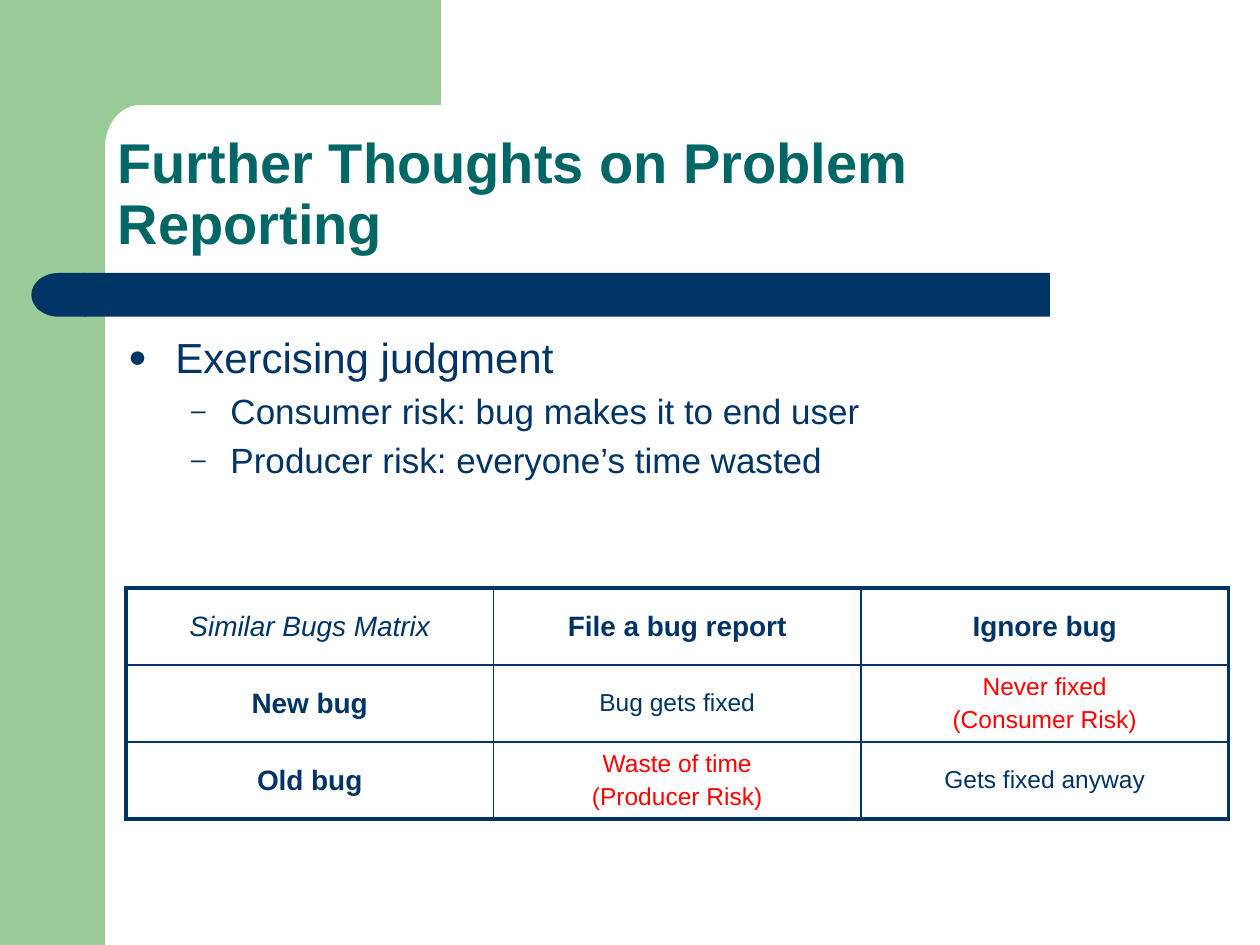
import math
import pptx
import pptx.util
import pptx.dml.color
import pptx.enum.shapes
import pptx.enum.text
import pptx.oxml
import pptx.oxml.ns

Pt = pptx.util.Pt
Shape = pptx.enum.shapes.MSO_SHAPE
Align = pptx.enum.text.PP_ALIGN
Anchor = pptx.enum.text.MSO_ANCHOR
HUES = {"green": "99CC99", "navy": "003366", "teal": "006666", "red": "FF0000"}
FONT = "Arial"
ITEMS = [
    ("Exercising judgment", 0, 24),
    ("Consumer risk: bug makes it to end user", 1, 20),
    ("Producer risk: everyone’s time wasted", 1, 20),
]
BULLETS = [("●", 27, -27), ("–", 58.5, -22.5)]
HEAD = {"size": 16, "bold": True}
RISK = {"size": 14, "hue": "red"}
PLAIN = {"size": 14}
CELLS = [
    [(["Similar Bugs Matrix"], {"size": 16, "italic": True}),
     (["File a bug report"], HEAD), (["Ignore bug"], HEAD)],
    [(["New bug"], HEAD), (["Bug gets fixed"], PLAIN),
     (["Never fixed", "(Consumer Risk)"], RISK)],
    [(["Old bug"], HEAD), (["Waste of time", "(Producer Risk)"], RISK),
     (["Gets fixed anyway"], PLAIN)],
]


def color(name):
    return pptx.dml.color.RGBColor.from_string(HUES[name])


def write(para, text, size=16, hue="navy", bold=False, italic=False,
          align=Align.LEFT, before=0.2):
    para.alignment = align
    para.space_before = Pt(round(size * before, 1))
    run = para.add_run()
    run.text = text
    font = run.font
    font.name, font.size = FONT, Pt(size)
    font.bold, font.italic = bold, italic
    font.color.rgb = color(hue)


def paint(shape, hue):
    shape.shadow.inherit = False
    shape.fill.solid()
    shape.fill.fore_color.rgb = color(hue)
    shape.line.fill.background()
    return shape


def block(slide, kind, box, hue):
    return paint(slide.shapes.add_shape(kind, *map(Pt, box)), hue)


def corner(slide):
    left, top, wide, high = 60, 60, 20, 24
    arc = []
    for step in range(13):
        turn = math.radians(90 * step / 12)
        arc.append((left + wide * (1 - math.sin(turn)),
                    top + high * (1 - math.cos(turn))))
    points = [(252, top), *arc, (left, 92), (36, 92), (36, 0)]
    path = slide.shapes.build_freeform(Pt(252), 0, scale=1.0)
    path.add_line_segments([(Pt(x), Pt(y)) for x, y in points], close=True)
    paint(path.convert_to_shape(), "green")


def place(shape, box):
    shape.left, shape.top, shape.width, shape.height = map(Pt, box)


def title(slide):
    shape = slide.shapes.title
    place(shape, (60, 60, 624, 90))
    frame = shape.text_frame
    frame.word_wrap = True
    frame.auto_size = pptx.enum.text.MSO_AUTO_SIZE.NONE
    frame.vertical_anchor = Anchor.BOTTOM
    frame.margin_right = Pt(24)
    para = frame.paragraphs[0]
    para.line_spacing = 0.9
    write(para, "Further Thoughts on Problem Reporting", size=32,
          hue="teal", bold=True, before=0)


def bullet(para, mark, left, indent):
    props = para._p.get_or_add_pPr()
    props.set("marL", str(Pt(left)))
    props.set("indent", str(Pt(indent)))
    space = pptx.oxml.ns.nsdecls("a")
    for part in (f'<a:buClr {space}><a:srgbClr val="{HUES["navy"]}"/></a:buClr>',
                 f'<a:buSzPct {space} val="75000"/>',
                 f'<a:buFont {space} typeface="{FONT}"/>',
                 f'<a:buChar {space} char="{mark}"/>'):
        props.append(pptx.oxml.parse_xml(part))


def body(slide):
    shape = slide.placeholders[1]
    place(shape, (66, 186, 642, 138))
    frame = shape.text_frame
    frame.auto_size = pptx.enum.text.MSO_AUTO_SIZE.NONE
    for spot, (text, level, size) in enumerate(ITEMS):
        para = frame.add_paragraph() if spot else frame.paragraphs[0]
        para.level = level
        write(para, text, size=size)
        bullet(para, *BULLETS[level])


def border(cell, side, width):
    cell._tc.get_or_add_tcPr().append(pptx.oxml.parse_xml(
        f'<a:ln{side} {pptx.oxml.ns.nsdecls("a")} w="{Pt(width)}"><a:solidFill>'
        f'<a:srgbClr val="{HUES["navy"]}"/></a:solidFill></a:ln{side}>'))


def matrix(slide):
    count = len(CELLS)
    table = slide.shapes.add_table(
        count, count, Pt(72), Pt(336), Pt(630), Pt(132)).table
    table.first_row = table.horz_banding = False
    for row, line in enumerate(CELLS):
        for col, (texts, style) in enumerate(line):
            cell = table.cell(row, col)
            cell.vertical_anchor = Anchor.MIDDLE
            outer = {"L": col == 0, "R": col == count - 1,
                     "T": row == 0, "B": row == count - 1}
            for side, edge in outer.items():
                border(cell, side, 2.25 if edge else 1)
            cell.fill.background()
            frame = cell.text_frame
            for spot, text in enumerate(texts):
                para = frame.add_paragraph() if spot else frame.paragraphs[0]
                write(para, text, align=Align.CENTER, **style)


def main():
    deck = pptx.Presentation()
    deck.slide_width, deck.slide_height = Pt(720), Pt(540)
    slide = deck.slides.add_slide(deck.slide_layouts[1])
    block(slide, Shape.RECTANGLE, (0, 0, 60, 540), "green")
    corner(slide)
    block(slide, Shape.RECTANGLE, (48, 156, 552, 25), "navy")
    cap = block(slide, Shape.FLOWCHART_DELAY, (18, 156, 31, 25), "navy")
    cap._element.spPr.xfrm.set("flipH", "1")
    title(slide)
    body(slide)
    matrix(slide)
    deck.save("out.pptx")


if __name__ == "__main__":
    main()
